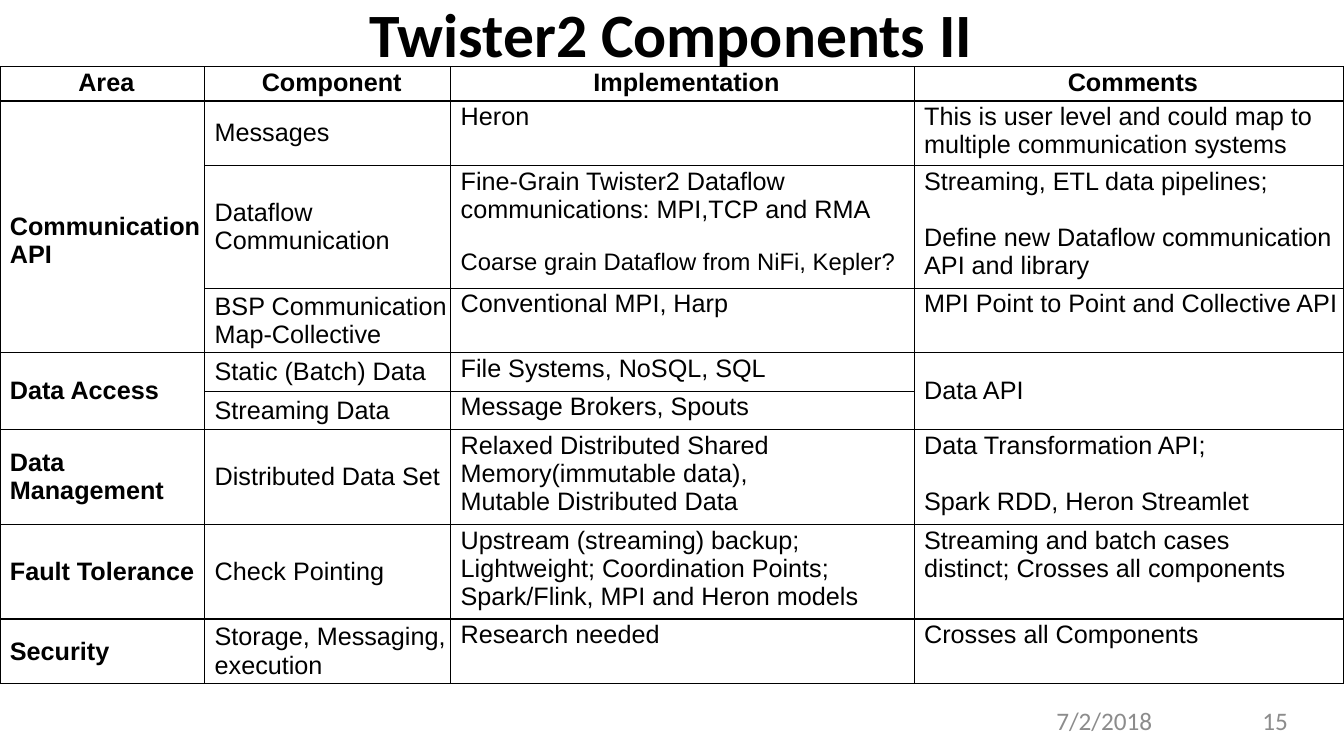
from lxml.etree import SubElement
from pptx import Presentation
from pptx.dml.color import RGBColor
from pptx.enum.text import MSO_ANCHOR, PP_ALIGN
from pptx.oxml.ns import qn
from pptx.util import Cm, Pt

BLACK = RGBColor(0x00, 0x00, 0x00)
GRAY = RGBColor(0x8C, 0x8C, 0x8C)

COLUMN_WIDTHS = [5.16, 6.2, 11.68, 10.82]
ROW_HEIGHTS = [0.84, 1.6, 2.46, 1.6, 0.97, 0.97, 1.75, 1.75, 1.6]
ROWS = [
    ["Area", "Component", "Implementation", "Comments"],
    ["Communication API", "Messages", "Heron",
     "This is user level and could map to multiple communication systems"],
    ["", "Dataflow Communication",
     "Fine-Grain Twister2 Dataflow communications: MPI,TCP and RMA\n\n"
     "Coarse grain Dataflow from NiFi, Kepler?",
     "Streaming, ETL data pipelines;\n\n"
     "Define new Dataflow communication\nAPI and library"],
    ["", "BSP Communication\nMap-Collective", "Conventional MPI, Harp",
     "MPI Point to Point and Collective API"],
    ["Data Access", "Static (Batch) Data", "File Systems, NoSQL, SQL", "Data API"],
    ["", "Streaming Data", "Message Brokers, Spouts", ""],
    ["Data Management", "Distributed Data Set",
     "Relaxed Distributed Shared Memory(immutable data),\nMutable Distributed Data",
     "Data Transformation API;\n\nSpark RDD, Heron Streamlet"],
    ["Fault Tolerance", "Check Pointing",
     "Upstream (streaming) backup; Lightweight; Coordination Points; "
     "Spark/Flink, MPI and Heron models",
     "Streaming and batch cases\ndistinct; Crosses all components"],
    ["Security", "Storage, Messaging, execution", "Research needed",
     "Crosses all Components"],
]
MERGES = [((1, 0), (3, 0)), ((4, 0), (5, 0)), ((4, 3), (5, 3))]


def format_para(para, font_name, size, color, bold=False, align=PP_ALIGN.LEFT):
    para.alignment = align
    para.font.size = Pt(size)
    for span in para.runs:
        span.font.name = font_name
        span.font.size = Pt(size)
        span.font.bold = bold
        span.font.color.rgb = color


def place_title(page, left, top, width, height):
    title = page.shapes.title
    title.left, title.top, title.width, title.height = left, top, width, height
    title.text_frame.text = "Twister2 Components II"
    title.text_frame.vertical_anchor = MSO_ANCHOR.MIDDLE
    para = title.text_frame.paragraphs[0]
    para.line_spacing = 0.9
    format_para(para, "Calibri", 44, BLACK, True, PP_ALIGN.CENTER)


def add_footer_text(page, text, align, left, top, width, height):
    box = page.shapes.add_textbox(left, top, width, height)
    box.text_frame.word_wrap = True
    box.text_frame.text = text
    format_para(box.text_frame.paragraphs[0], "Calibri", 18, GRAY, align=align)


def add_borders(cell):
    properties = cell._tc.get_or_add_tcPr()
    for side in ("a:lnL", "a:lnR", "a:lnT", "a:lnB"):
        line = SubElement(properties, qn(side), w=str(Pt(1)))
        fill = SubElement(line, qn("a:solidFill"))
        SubElement(fill, qn("a:srgbClr"), val=str(BLACK))


def fill_cell(cell, text, row, column):
    add_borders(cell)
    cell.fill.background()
    cell.margin_left = Cm(0.25)
    cell.margin_right = cell.margin_top = cell.margin_bottom = Cm(0.05)
    middle = row > 0 and (column < 2 or text == "Data API")
    cell.vertical_anchor = MSO_ANCHOR.MIDDLE if middle else MSO_ANCHOR.TOP
    blocks = text.split("\n\n")
    cell.text_frame.text = "\n".join(blocks)
    paras = cell.text_frame.paragraphs
    for para in paras:
        size = 17 if para.text.startswith("Coarse") else 18
        align = PP_ALIGN.LEFT if row else PP_ALIGN.CENTER
        format_para(para, "Arial", size, BLACK, row == 0 or column == 0, align)
    if len(blocks) > 1:
        paras[len(blocks[0].split("\n"))].space_before = Pt(20 if column == 3 else 18)


def add_component_table(page, left, top, width, height):
    frame = page.shapes.add_table(len(ROWS), len(COLUMN_WIDTHS), left, top, width, height)
    table = frame.table
    table.first_row = table.horz_banding = False
    for column, size in zip(table.columns, COLUMN_WIDTHS):
        column.width = Cm(size)
    for row, size in zip(table.rows, ROW_HEIGHTS):
        row.height = Cm(size)
    for row, texts in enumerate(ROWS):
        for column, text in enumerate(texts):
            fill_cell(table.cell(row, column), text, row, column)
    table.cell(1, 0).margin_top = Cm(0.76)
    for first, last in MERGES:
        table.cell(*first).merge(table.cell(*last))


def main():
    deck = Presentation()
    deck.slide_width, deck.slide_height = Cm(33.87), Cm(19.05)
    page = deck.slides.add_slide(deck.slide_layouts[5])
    place_title(page, Cm(2.31), Cm(-0.3), Cm(29.21), Cm(2.49))
    add_footer_text(page, "7/2/2018", PP_ALIGN.LEFT, Cm(26.37), Cm(17.65), Cm(3.71), Cm(1.02))
    add_footer_text(page, "15", PP_ALIGN.RIGHT, Cm(29.69), Cm(17.65), Cm(3.02), Cm(1.02))
    add_component_table(page, Cm(0), Cm(1.68), Cm(sum(COLUMN_WIDTHS)), Cm(sum(ROW_HEIGHTS)))
    deck.save("out.pptx")


if __name__ == "__main__":
    main()
